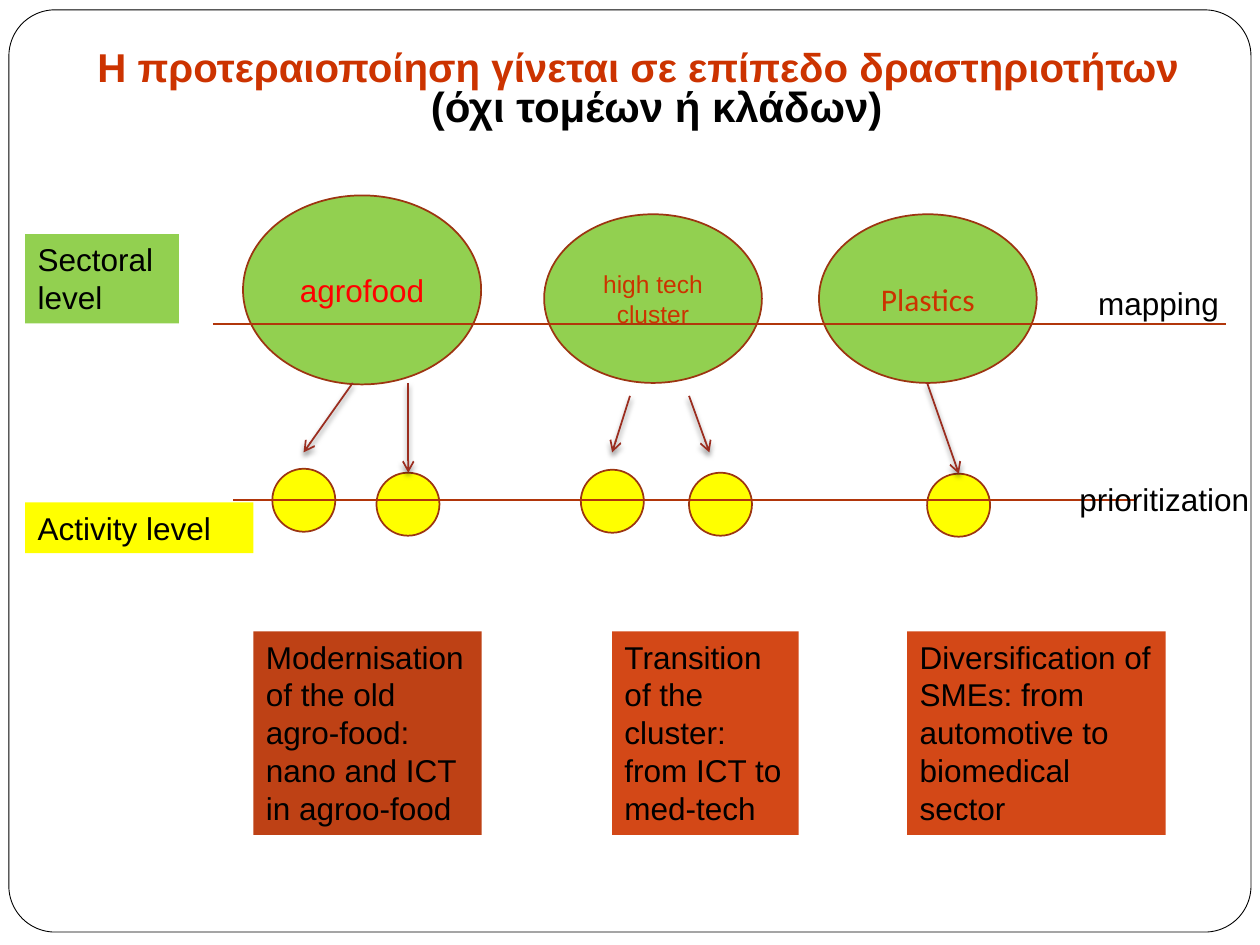
"""Build the slide on setting priorities at the level of activities."""
import lxml.etree
import pptx
import pptx.dml.color
import pptx.enum.shapes
import pptx.enum.text
import pptx.oxml
import pptx.oxml.ns
import pptx.util

Cm = pptx.util.Cm
SHAPES = pptx.enum.shapes.MSO_SHAPE
STRAIGHT = pptx.enum.shapes.MSO_CONNECTOR.STRAIGHT
CENTER = pptx.enum.text.PP_ALIGN.CENTER
MIDDLE = pptx.enum.text.MSO_ANCHOR.MIDDLE
TOP = pptx.enum.text.MSO_ANCHOR.TOP
GREEN, YELLOW, ORANGE, RED = "92D050", "FFFF00", "D34817", "CC3300"
BLACK, OUTLINE = "000000", "9C3511"
SHADOW = (
    f'<a:effectLst {pptx.oxml.ns.nsdecls("a")}>'
    '<a:outerShdw blurRad="38100" dist="25400" dir="5400000" rotWithShape="0">'
    '<a:srgbClr val="000000"><a:alpha val="50000"/></a:srgbClr>'
    "</a:outerShdw></a:effectLst>"
)


def paint(target, color):
    target.rgb = pptx.dml.color.RGBColor.from_string(color)


def write(paragraph, text, color=BLACK, alignment=None, **formats):
    paragraph.alignment = alignment
    run = paragraph.add_run()
    run.text = text
    values = {"name": "Arial", "size": 18, "bold": False} | formats
    values["size"] = pptx.util.Pt(values["size"])
    for name, value in values.items():
        setattr(run.font, name, value)
    paint(run.font.color, color)


presentation = pptx.Presentation()
presentation.slide_width = Cm(25.4)
presentation.slide_height = Cm(19.05)
slide = presentation.slides.add_slide(presentation.slide_layouts[6])

ellipses = [
    (4.9, 3.94, 4.8, 3.81, "agrofood", {"color": "FF0000"}),
    (10.97, 4.32, 4.39, 3.4, "high tech cluster", {"color": RED, "size": 14}),
    (16.51, 4.32, 4.39, 3.4, "Plastics", {"color": RED, "name": "Calibri"}),
]
circles = [(5.49, 9.45), (7.59, 9.53), (11.71, 9.47), (13.89, 9.53), (18.69, 9.55)]

outlined = [(SHAPES.ROUNDED_RECTANGLE, 0.18, 0.2, 25.04, 18.59, "FFFFFF", BLACK, 0.5, "", {})]
for left, top, width, height, text, formats in ellipses:
    outlined.append((SHAPES.OVAL, left, top, width, height, GREEN, OUTLINE, 1, text, formats))
for left, top in circles:
    outlined.append(
        (SHAPES.FLOWCHART_CONNECTOR, left, top, 1.27, 1.27, YELLOW, OUTLINE, 1, "", {})
    )

for kind, left, top, width, height, fill, line, weight, text, formats in outlined:
    shape = slide.shapes.add_shape(kind, Cm(left), Cm(top), Cm(width), Cm(height))
    shape.shadow.inherit = False
    shape.fill.solid()
    paint(shape.fill.fore_color, fill)
    paint(shape.line.color, line)
    shape.line.width = pptx.util.Pt(weight)
    if kind == SHAPES.ROUNDED_RECTANGLE:
        shape.adjustments[0] = 0.05
    if text:
        shape.text_frame.word_wrap = True
        shape.text_frame.vertical_anchor = MIDDLE
        write(shape.text_frame.paragraphs[0], text, alignment=CENTER, **formats)

arrows = [
    (7.11, 7.72, 6.12, 9.12),
    (8.23, 7.72, 8.23, 9.53),
    (18.69, 7.72, 19.33, 9.55),
    (13.89, 7.98, 14.3, 9.12),
    (12.7, 7.98, 12.34, 9.12),
]
levels = [(4.29, 6.53, 24.71, 6.53), (4.7, 10.08, 22.91, 10.08)]
for ends in arrows + levels:
    is_arrow = ends in arrows
    connector = slide.shapes.add_connector(STRAIGHT, *map(Cm, ends))
    paint(connector.line.color, "9B2D1F" if is_arrow else "B1360B")
    connector.line.width = pptx.util.Pt(1 if is_arrow else 0.75)
    effects = pptx.oxml.parse_xml(SHADOW)
    if is_arrow:
        line = connector.line._get_or_add_ln()
        lxml.etree.SubElement(line, pptx.oxml.ns.qn("a:tailEnd"), type="arrow")
    else:
        effects.remove(effects[0])
    connector._element.spPr.append(effects)

boxes = [
    (0.51, 4.72, 3.1, 1.8, GREEN, "Sectoral level"),
    (0.51, 10.13, 4.6, 1.02, YELLOW, "Activity level"),
    (21.89, 5.61, 3.2, 1.02, None, "mapping"),
    (21.51, 9.55, 4.19, 1.02, None, "prioritization"),
    (5.11, 12.73, 4.6, 4.1, "BE4115",
     "Modernisation of the old agro-food: nano and ICT in agroo-food"),
    (12.34, 12.73, 3.76, 4.1, ORANGE, "Transition of the cluster: from ICT to med-tech"),
    (18.29, 12.73, 5.21, 4.1, ORANGE,
     "Diversification of SMEs: from automotive to biomedical sector"),
]
for left, top, width, height, fill, text in boxes:
    box = slide.shapes.add_textbox(Cm(left), Cm(top), Cm(width), Cm(height))
    box.text_frame.word_wrap = True
    box.text_frame.vertical_anchor = TOP
    if fill:
        box.fill.solid()
        paint(box.fill.fore_color, fill)
    write(box.text_frame.paragraphs[0], text)

title = slide.shapes.add_textbox(Cm(0.3), Cm(0.91), Cm(24.61), Cm(1.91))
title.text_frame.word_wrap = True
title_lines = [
    ("Η προτεραιοποίηση γίνεται σε επίπεδο δραστηριοτήτων", RED, 23, 0.56),
    ("(όχι τομέων ή κλάδων)", BLACK, 24, 1.27),
]
title.text_frame.add_paragraph()
for paragraph, (text, color, size, indent) in zip(title.text_frame.paragraphs, title_lines):
    paragraph.line_spacing = 0.8
    paragraph._p.get_or_add_pPr().set("marL", str(Cm(indent)))
    write(paragraph, text, color, CENTER, size=size, bold=True)

presentation.save("out.pptx")
